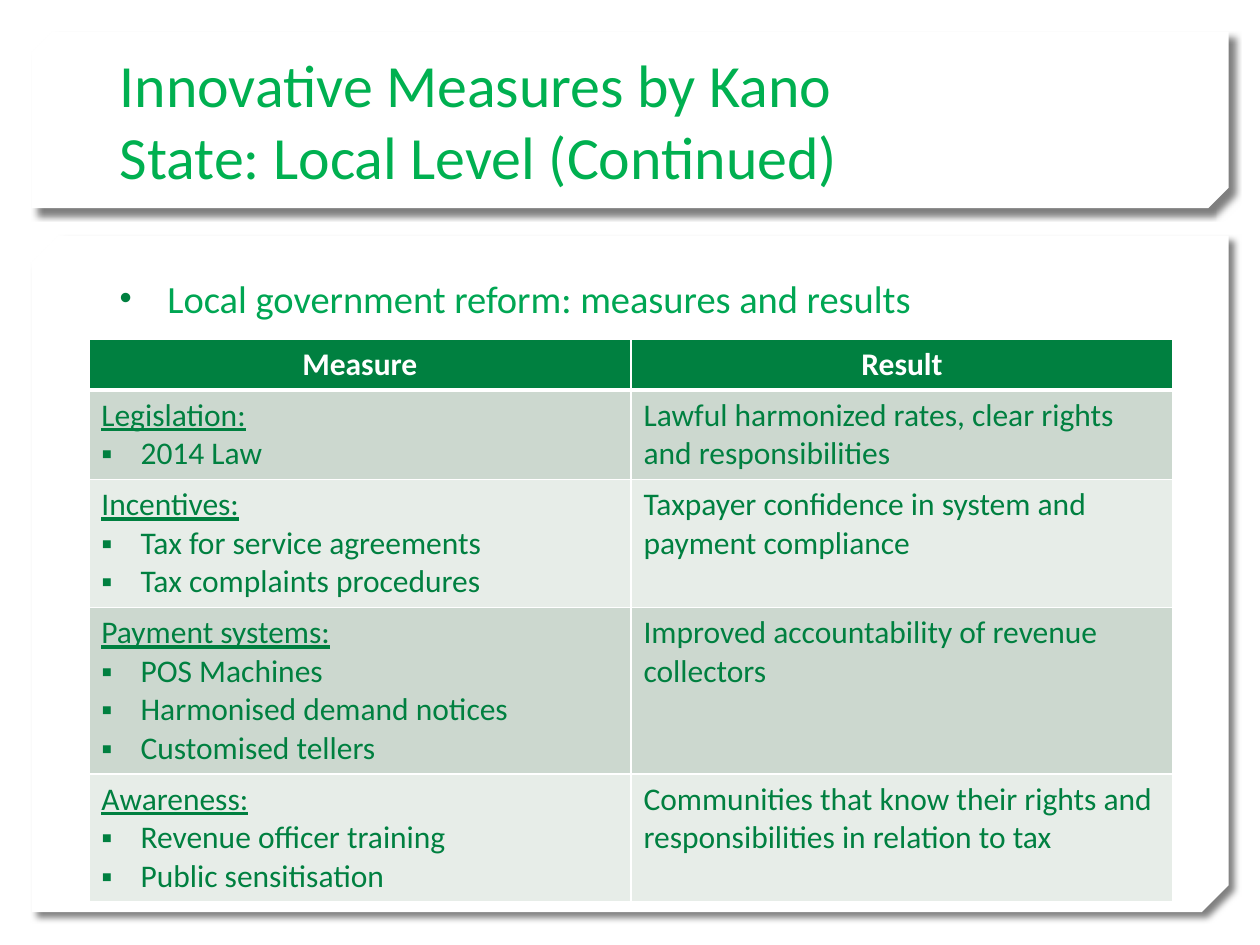
import pptx
import pptx.dml.color
import pptx.enum.shapes
import pptx.enum.text
import pptx.oxml
import pptx.util
from pptx.util import Cm

WHITE = pptx.dml.color.RGBColor(0xFF, 0xFF, 0xFF)
TITLE_GREEN = pptx.dml.color.RGBColor(0x00, 0xB0, 0x50)
BODY_GREEN = pptx.dml.color.RGBColor(0x00, 0xA6, 0x53)
DARK_GREEN = pptx.dml.color.RGBColor(0x00, 0x80, 0x40)
BAND_FILLS = [pptx.dml.color.RGBColor(0xCC, 0xD8, 0xCF),
              pptx.dml.color.RGBColor(0xE7, 0xED, 0xE8)]
ALIGN = pptx.enum.text.PP_ALIGN
NS = 'xmlns:a="http://schemas.openxmlformats.org/drawingml/2006/main"'


def add_xml(parent, xml):
    """Append a DrawingML element; {ns} stands for the namespace."""
    parent.append(pptx.oxml.parse_xml(xml.format(ns=NS)))


def write(frame, text, size=18, color=DARK_GREEN, bold=False, underline=False,
          align=ALIGN.LEFT, bullet=None, indent=Cm(0.79), first=True):
    """Write one paragraph, in the frame's first paragraph or a new one."""
    paragraph = frame.paragraphs[0] if first else frame.add_paragraph()
    paragraph.text = text
    paragraph.alignment = align
    paragraph.space_before = pptx.util.Pt(0)
    if bullet:
        properties = paragraph._p.get_or_add_pPr()
        properties.set("marL", str(indent))
        properties.set("indent", str(-indent))
        add_xml(properties, f'<a:buClr {{ns}}><a:srgbClr val="{DARK_GREEN}"/></a:buClr>')
        if bullet == "•":
            add_xml(properties, '<a:buSzPct {ns} val="90000"/>')
        add_xml(properties, '<a:buFont {ns} typeface="Arial"/>')
        add_xml(properties, f'<a:buChar {{ns}} char="{bullet}"/>')
    for run in paragraph.runs:
        run.font.name = "Calibri"
        run.font.size = pptx.util.Pt(size)
        run.font.color.rgb = color
        run.font.bold = bold
        run.font.underline = underline


deck = pptx.Presentation()
deck.slide_width, deck.slide_height = Cm(25.4), Cm(19.05)
slide = deck.slides.add_slide(deck.slide_layouts[1])
title = slide.shapes.title
body = slide.placeholders[1]

# White cards with a snipped corner and a shadow, behind the text
for top, height, snip in [(4.75, 13.64, 0.04), (0.64, 3.56, 0.117)]:
    card = slide.shapes.add_shape(
        pptx.enum.shapes.MSO_SHAPE.SNIP_2_DIAG_RECTANGLE,
        Cm(0.64), Cm(top), Cm(24.13), Cm(height))
    card.adjustments[0], card.adjustments[1] = 0, snip
    card.fill.solid()
    card.fill.fore_color.rgb = WHITE
    card.line.fill.background()
    card._element.spPr.xfrm.set("flipV", "1")
    add_xml(card._element.spPr,
            '<a:effectLst {ns}><a:outerShdw blurRad="50800" dist="63500" dir="2700000" '
            'algn="tl" rotWithShape="0"><a:srgbClr val="000000"><a:alpha val="50000"/>'
            '</a:srgbClr></a:outerShdw></a:effectLst>')
    title._element.addprevious(card._element)

# Title and lead bullet
for holder, top, height, anchor in [
        (title, 0.81, 3.18, pptx.enum.text.MSO_ANCHOR.BOTTOM),
        (body, 5.41, 11.13, pptx.enum.text.MSO_ANCHOR.TOP)]:
    holder.left, holder.top = Cm(2.16), Cm(top)
    holder.width, holder.height = Cm(21.06), Cm(height)
    holder.text_frame.auto_size = pptx.enum.text.MSO_AUTO_SIZE.NONE
    holder.text_frame.vertical_anchor = anchor
write(title.text_frame, "Innovative Measures by Kano \vState: Local Level (Continued)",
      size=34.2, color=TITLE_GREEN)
write(body.text_frame, "Local government reform: measures and results",
      size=22, color=BODY_GREEN, align=ALIGN.JUSTIFY, bullet="•", indent=Cm(0.96))

# Table of measures and results
headings = ["Measure", "Result"]
reforms = [
    ("Legislation:", ["2014 Law"],
     "Lawful harmonized rates, clear rights and responsibilities"),
    ("Incentives:", ["Tax for service agreements", "Tax complaints procedures"],
     "Taxpayer confidence in system and payment compliance"),
    ("Payment systems:", ["POS Machines", "Harmonised demand notices", "Customised tellers"],
     "Improved accountability of revenue collectors"),
    ("Awareness:", ["Revenue officer training", "Public sensitisation"],
     "Communities that know their rights and responsibilities in relation to tax"),
]
row_count = len(reforms) + 1
table = slide.shapes.add_table(row_count, 2, Cm(1.79), Cm(6.83),
                               Cm(21.86), Cm(1.03 * row_count)).table

for column, heading in enumerate(headings):
    write(table.cell(0, column).text_frame, heading, color=WHITE, bold=True,
          align=ALIGN.CENTER)
for row, (measure, steps, result) in enumerate(reforms, start=1):
    measure_frame = table.cell(row, 0).text_frame
    write(measure_frame, measure, underline=True)
    for step in steps:
        write(measure_frame, step, bullet="▪", first=False)
    write(table.cell(row, 1).text_frame, result)

# Cell borders and fills
for row in range(row_count):
    for cell in table.rows[row].cells:
        for side in ["L", "R", "T", "B"]:
            heavy = (row == 0 and side == "B") or (row == 1 and side == "T")
            width = pptx.util.Pt(3 if heavy else 1)
            add_xml(cell._tc.get_or_add_tcPr(),
                    f'<a:ln{side} {{ns}} w="{width}"><a:solidFill>'
                    f'<a:srgbClr val="{WHITE}"/></a:solidFill></a:ln{side}>')
        cell.fill.solid()
        cell.fill.fore_color.rgb = BAND_FILLS[(row - 1) % 2] if row else DARK_GREEN

deck.save("out.pptx")
